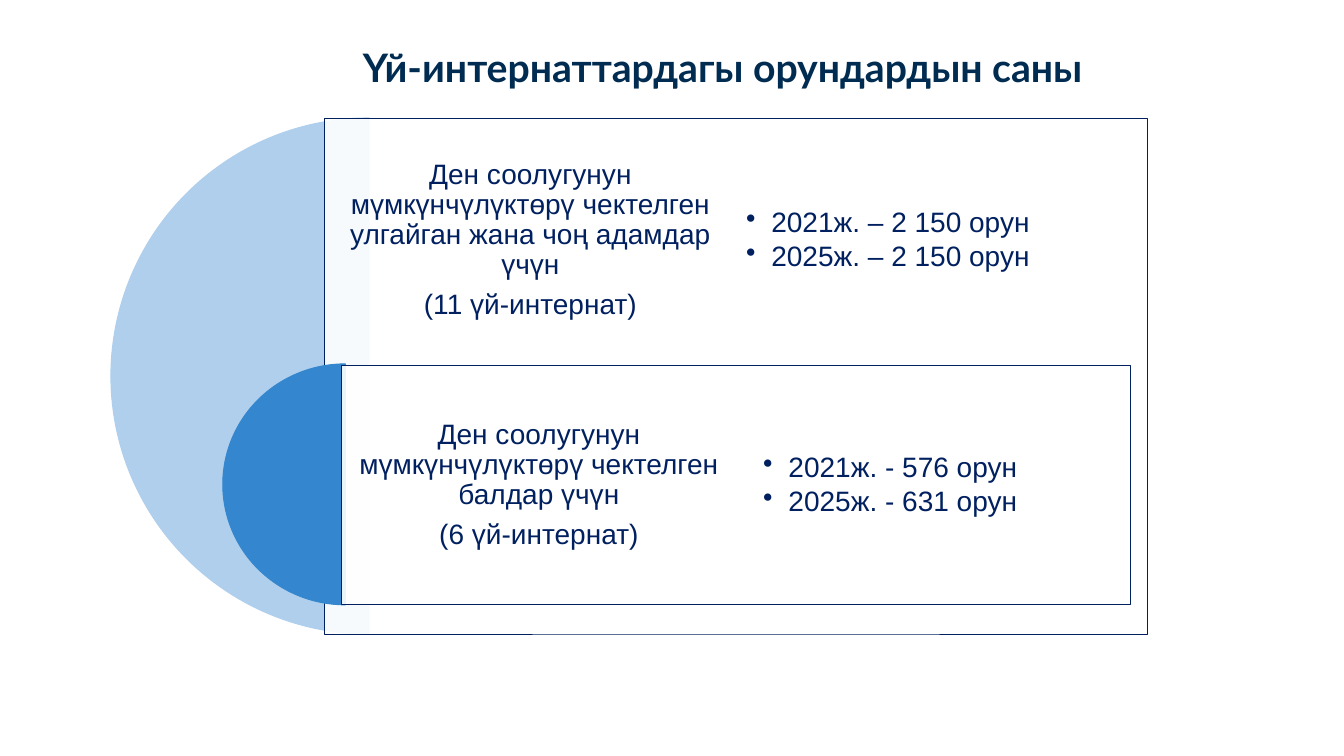
from dataclasses import dataclass

from lxml import etree
from pptx import Presentation
from pptx.dml.color import RGBColor
from pptx.enum.shapes import MSO_SHAPE
from pptx.enum.text import MSO_ANCHOR, PP_ALIGN
from pptx.oxml.ns import qn
from pptx.util import Inches, Pt

PIE, RECT = MSO_SHAPE.PIE, MSO_SHAPE.RECTANGLE
MIDDLE = MSO_ANCHOR.MIDDLE
LEFT, CENTER = PP_ALIGN.LEFT, PP_ALIGN.CENTER

TITLE = "Үй-интернаттардагы орундардын саны"
TITLE_BOX = (2.82, 0.22, 8.69, 0.94)

# Boxes are left, top, width, height in inches.
TIERS = [
    {
        "label": ["Ден соолугунун мүмкүнчүлүктөрү чектелген улгайган жана чоң адамдар үчүн",
                  "(11 үй-интернат)"],
        "facts": ["2021ж. – 2 150 орун", "2025ж. – 2 150 орун"],
        "tint": "AFCFEC",
        "disc": (1.1, 1.17, 5.12, 5.12),
        "panel": (3.22, 1.17, 8.16, 5.12),
        "row": 2.43,
        "facts_box": (7.13, 1.17, 3.96, 2.43),
    },
    {
        "label": ["Ден соолугунун мүмкүнчүлүктөрү чектелген балдар үчүн",
                  "(6 үй-интернат)"],
        "facts": ["2021ж. - 576 орун", "2025ж. - 631 орун"],
        "tint": "3486CE",
        "disc": (2.21, 3.61, 2.43, 2.39),
        "panel": (3.39, 3.63, 7.82, 2.37),
        "row": 2.37,
        "facts_box": (7.3, 3.6, 3.64, 2.43),
    },
]


@dataclass(frozen=True)
class Theme:
    title: str = "002C52"
    text: str = "002060"
    panel: str = "FFFFFF"
    head_font: str = "Lato"
    body_font: str = "Arial"
    head_size: int = 28
    body_size: int = 20
    label_gap: int = 7
    fact_gap: int = 3


THEME = Theme()


def add_form(slide, kind, box, fill, line, weight):
    form = slide.shapes.add_shape(kind, *map(Inches, box))
    form.shadow.inherit = False
    form.fill.solid()
    form.fill.fore_color.rgb = RGBColor.from_string(fill)
    form.line.color.rgb = RGBColor.from_string(line)
    form.line.width = Pt(weight)
    return form


def add_half(slide, box, tint):
    """Draw the left half of a disc."""
    half = add_form(slide, PIE, box, tint, tint, 0.75)
    half.adjustments[0] = 54
    half.adjustments[1] = 162


def add_panel(slide, box):
    panel = add_form(slide, RECT, box, THEME.panel, THEME.text, 0.5)
    color = panel.fill._xPr.find(qn("a:solidFill"))[0]
    etree.SubElement(color, qn("a:alpha"), val="90000")


def add_bullet(para):
    props = para._p.get_or_add_pPr()
    props.set("marL", str(Inches(0.25)))
    props.set("indent", str(-Inches(0.25)))
    etree.SubElement(props, qn("a:buChar"), char="•")


def add_text(slide, box, lines, inset=0.08, gap=0, align=CENTER, bullet=False,
             font=THEME.body_font, size=THEME.body_size, color=THEME.text, bold=False):
    frame = slide.shapes.add_textbox(*map(Inches, box)).text_frame
    frame.word_wrap = True
    frame.vertical_anchor = MIDDLE
    frame.margin_left = frame.margin_right = Inches(inset)
    frame.margin_top = frame.margin_bottom = Inches(inset)
    frame.text = "\n".join(lines)
    for para in frame.paragraphs:
        para.alignment = align
        para.line_spacing = 0.9
        para.space_after = Pt(gap)
        if bullet:
            add_bullet(para)
        for run in para.runs:
            run.font.name = font
            run.font.size = Pt(size)
            run.font.bold = bold
            run.font.color.rgb = RGBColor.from_string(color)


def add_tier(slide, tier):
    left, top, width, _ = tier["panel"]
    add_half(slide, tier["disc"], tier["tint"])
    add_panel(slide, tier["panel"])
    add_text(slide, (left, top, width / 2, tier["row"]), tier["label"],
             gap=THEME.label_gap)
    add_text(slide, tier["facts_box"], tier["facts"], inset=0.27,
             gap=THEME.fact_gap, align=LEFT, bullet=True)


def main():
    deck = Presentation()
    deck.slide_width, deck.slide_height = Inches(13.33), Inches(7.5)
    slide = deck.slides.add_slide(deck.slide_layouts[6])
    add_text(slide, TITLE_BOX, [TITLE], font=THEME.head_font,
             size=THEME.head_size, color=THEME.title, bold=True)
    for tier in TIERS:
        add_tier(slide, tier)
    deck.save("out.pptx")


if __name__ == "__main__":
    main()
